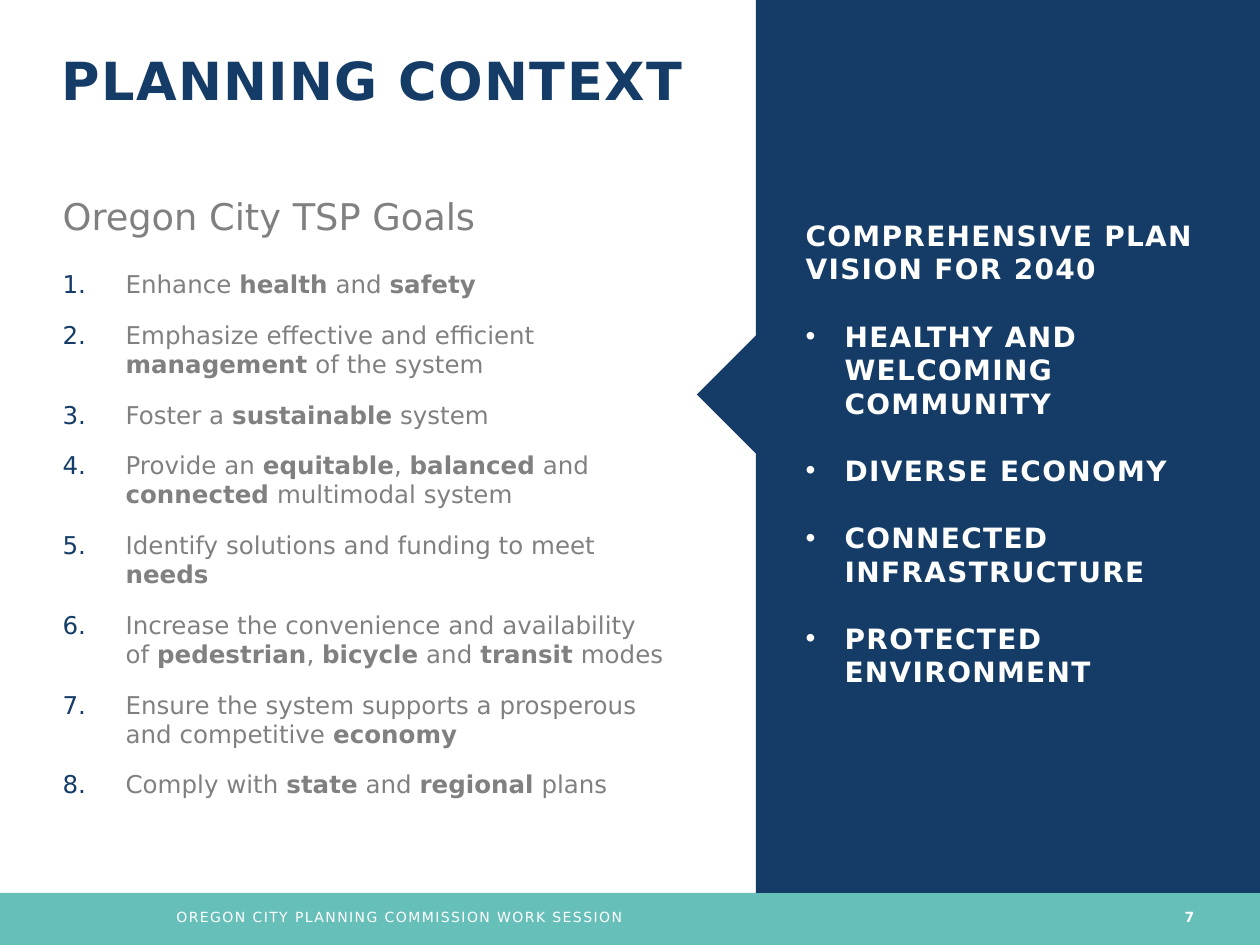
from lxml.etree import SubElement
from pptx import Presentation
from pptx.dml.color import RGBColor
from pptx.enum.shapes import MSO_SHAPE
from pptx.enum.text import MSO_ANCHOR, MSO_AUTO_SIZE, PP_ALIGN
from pptx.oxml.ns import qn
from pptx.util import Emu, Pt

NAVY = RGBColor(0x14, 0x3C, 0x66)
TEAL = RGBColor(0x41, 0xAF, 0xA8)
GRAY = RGBColor(0x80, 0x80, 0x80)
WHITE = RGBColor(0xFF, 0xFF, 0xFF)

FONT = "DejaVu Sans"
PX_PER_INCH = 126
TWO_CONTENT = 3

# Words between asterisks are bold
GOALS = [
    "Enhance *health* and *safety*",
    "Emphasize effective and efficient *management* of the system",
    "Foster a *sustainable* system",
    "Provide an *equitable*, *balanced* and *connected* multimodal system",
    "Identify solutions and funding to meet *needs*",
    "Increase the convenience and availability of *pedestrian*, *bicycle* and *transit* modes",
    "Ensure the system supports a prosperous and competitive *economy*",
    "Comply with *state* and *regional* plans",
]
VISIONS = [
    "HEALTHY AND WELCOMING COMMUNITY",
    "DIVERSE ECONOMY",
    "CONNECTED INFRASTRUCTURE",
    "PROTECTED ENVIRONMENT",
]


def px(n):
    return Emu(round(n * 914400 / PX_PER_INCH))


class Deck:
    def __init__(self, width, height):
        self.prs = Presentation()
        self.prs.slide_width, self.prs.slide_height = px(width), px(height)
        self.slide = None

    def add_slide(self, layout):
        self.slide = self.prs.slides.add_slide(self.prs.slide_layouts[layout])

    def shape(self, kind, box, color, alpha=100, rotation=0):
        sp = self.slide.shapes.add_shape(kind, *map(px, box))
        sp.shadow.inherit = False
        sp.rotation = rotation
        sp.fill.solid()
        sp.fill.fore_color.rgb = color
        sp.line.fill.background()
        if alpha < 100:
            clr = sp._element.spPr.find(qn("a:solidFill"))[0]
            SubElement(clr, qn("a:alpha"), val=str(alpha * 1000))

    def frame(self, sp, anchor):
        tf = sp.text_frame
        tf.word_wrap = True
        tf.auto_size = MSO_AUTO_SIZE.NONE
        tf.vertical_anchor = anchor
        return tf

    def placeholder(self, idx, box, anchor=MSO_ANCHOR.TOP):
        sp = self.slide.placeholders[idx]
        sp.left, sp.top, sp.width, sp.height = map(px, box)
        self.slide.shapes._spTree.append(sp._element)  # bring to front
        return self.frame(sp, anchor)

    def textbox(self, box):
        sp = self.slide.shapes.add_textbox(*map(px, box))
        return self.frame(sp, MSO_ANCHOR.MIDDLE)

    def paragraph(self, tf, text, size, color, bold=False, spacing=0, line=1.0,
                  before=0, after=0, align=PP_ALIGN.LEFT, level=0):
        p = tf.paragraphs[0] if not tf.text else tf.add_paragraph()
        p.level, p.alignment, p.line_spacing = level, align, line
        p.space_before, p.space_after = Pt(before), Pt(after)
        for i, part in enumerate(text.split("*")):
            if not part:
                continue
            r = p.add_run()
            r.text = part
            r.font.name, r.font.size = FONT, Pt(size)
            r.font.color.rgb = color
            r.font.bold = bold or i % 2 == 1
            if spacing:
                r._r.get_or_add_rPr().set("spc", str(round(spacing * 100)))
        return p

    def bullet(self, p, indent=0, char=None, number_color=None):
        pPr = p._p.get_or_add_pPr()
        pPr.set("marL", str(px(indent)))
        pPr.set("indent", str(-px(indent)))
        if number_color is not None:
            clr = SubElement(pPr, qn("a:buClr"))
            SubElement(clr, qn("a:srgbClr"), val=str(number_color))
            SubElement(pPr, qn("a:buFont"), typeface=FONT)
            SubElement(pPr, qn("a:buAutoNum"), type="arabicPeriod")
        elif char:
            SubElement(pPr, qn("a:buFont"), typeface="Arial")
            SubElement(pPr, qn("a:buChar"), char=char)
        else:
            SubElement(pPr, qn("a:buNone"))


def main():
    deck = Deck(1260, 945)
    deck.add_slide(TWO_CONTENT)

    # Footer band, side panel and its pointer
    deck.shape(MSO_SHAPE.RECTANGLE, (0, 893, 1260, 52), TEAL, alpha=80)
    deck.shape(MSO_SHAPE.RECTANGLE, (756, 0, 504, 893), NAVY)
    deck.shape(MSO_SHAPE.PENTAGON, (697, 334, 382, 121), NAVY, rotation=180)

    # Footer text and page number
    footer = dict(size=8, color=WHITE, spacing=0.8, line=0.9)
    tf = deck.textbox((164, 895, 930, 45))
    deck.paragraph(tf, "OREGON CITY PLANNING COMMISSION WORK SESSION", **footer)
    tf = deck.textbox((1129, 895, 78, 45))
    deck.paragraph(tf, "7", bold=True, align=PP_ALIGN.RIGHT, **footer)

    # Title
    tf = deck.placeholder(0, (49, 49, 661, 107))
    deck.paragraph(tf, "PLANNING CONTEXT", 30, NAVY, bold=True, spacing=0.8, line=0.9)

    # Numbered goals
    tf = deck.placeholder(1, (50, 183, 630, 667))
    p = deck.paragraph(tf, "Oregon City TSP Goals", 21, GRAY, line=1.1, after=12)
    deck.bullet(p)
    for goal in GOALS:
        p = deck.paragraph(tf, goal, 14, GRAY, before=6, after=6, level=1)
        deck.bullet(p, indent=63, number_color=NAVY)

    # Vision list on the panel
    vision = dict(size=16, color=WHITE, bold=True, spacing=0.8)
    tf = deck.placeholder(2, (793, 184, 454, 539), MSO_ANCHOR.MIDDLE)
    p = deck.paragraph(tf, "COMPREHENSIVE PLAN VISION FOR 2040", **vision)
    deck.bullet(p)
    for item in VISIONS:
        p = deck.paragraph(tf, item, before=19.2, **vision)
        deck.bullet(p, indent=39, char="•")

    deck.prs.save("out.pptx")


if __name__ == "__main__":
    main()
